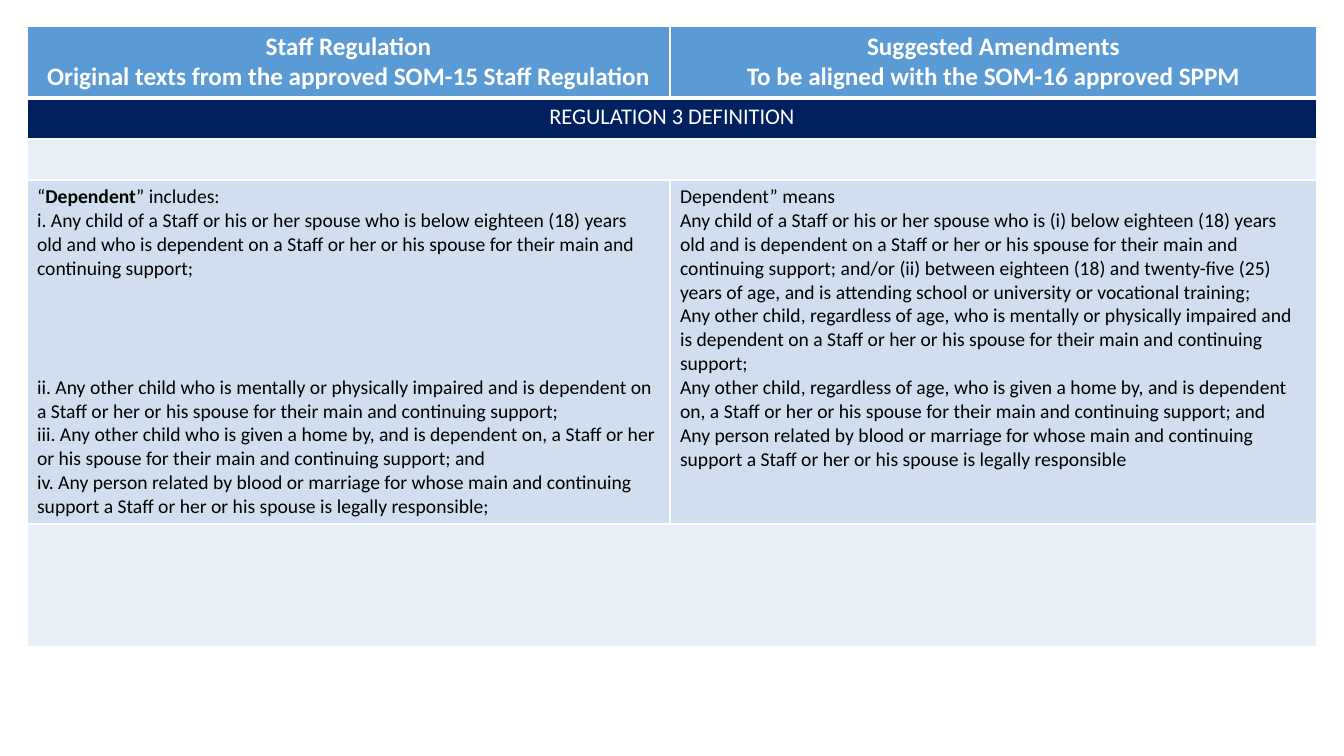
from lxml import etree
from pptx import Presentation
from pptx.dml.color import RGBColor
from pptx.enum.text import PP_ALIGN
from pptx.oxml.ns import qn
from pptx.util import Emu, Pt

CENTER, LEFT = PP_ALIGN.CENTER, PP_ALIGN.LEFT
WHITE = RGBColor(0xFF, 0xFF, 0xFF)
BLACK = RGBColor(0, 0, 0)
BLUE = RGBColor(0x5B, 0x9B, 0xD5)
NAVY = RGBColor(0, 0x20, 0x60)
PALE = RGBColor(0xE9, 0xEF, 0xF7)
SOFT = RGBColor(0xD0, 0xDE, 0xEF)
SCALE = 12192000 / 1344

HEAD = {"size": Pt(18), "bold": True, "color": WHITE, "align": CENTER}
BAND = {"size": Pt(16), "bold": False, "color": WHITE, "align": CENTER}
BODY = {"size": Pt(14), "bold": False, "color": BLACK, "align": LEFT}
GAP = Pt(68)

HEADS = [
    ["Staff Regulation", "Original texts from the approved SOM-15 Staff Regulation"],
    ["Suggested Amendments", "To be aligned with the SOM-16 approved SPPM"],
]
OLD = [
    ["“", "Dependent", "” includes:"],
    "i. Any child of a Staff or his or her spouse who is below eighteen (18) years",
    "old and who is dependent on a Staff or her or his spouse for their main and",
    "continuing support;",
    "ii. Any other child who is mentally or physically impaired and is dependent on a Staff or her or his spouse for their main and continuing support;",
    "iii. Any other child who is given a home by, and is dependent on, a Staff or her or his spouse for their main and continuing support; and",
    "iv. Any person related by blood or marriage for whose main and continuing",
    "support a Staff or her or his spouse is legally responsible;",
]
NEW = [
    "Dependent” means",
    "Any child of a Staff or his or her spouse who is (i) below eighteen (18) years old and is dependent on a Staff or her or his spouse for their main and continuing support; and/or (ii) between eighteen (18) and twenty-five (25) years of age, and is attending school or university or vocational training;",
    "Any other child, regardless of age, who is mentally or physically impaired and is dependent on a Staff or her or his spouse for their main and continuing support;",
    "Any other child, regardless of age, who is given a home by, and is dependent on, a Staff or her or his spouse for their main and continuing support; and",
    "Any person related by blood or marriage for whose main and continuing support a Staff or her or his spouse is legally responsible",
]


def px(count):
    """Turn whole pixels into EMU."""
    return Emu(round(count * SCALE))


class Sheet:
    """Holds the slide and its font, and draws table parts."""

    def __init__(self, slide, font):
        """Keep the slide and the font name."""
        self.slide, self.font = slide, font

    def table(self, left, top, cols, rows):
        """Add a plain table with the given column and row sizes."""
        frame = self.slide.shapes.add_table(
            len(rows), len(cols), px(left), px(top), px(sum(cols)), px(sum(rows)))
        grid = frame.table
        grid.first_row = grid.horz_banding = False
        for col, width in zip(grid.columns, cols):
            col.width = px(width)
        for row, height in zip(grid.rows, rows):
            row.height = px(height)
        return grid

    def paint(self, cell, color, base=1):
        """Give a cell white borders and a solid fill."""
        props = cell._tc.get_or_add_tcPr()
        for side, width in (("L", 1), ("R", 1), ("T", 1), ("B", base)):
            line = etree.SubElement(props, qn("a:ln" + side), w=str(Pt(width)))
            fill = etree.SubElement(line, qn("a:solidFill"))
            etree.SubElement(fill, qn("a:srgbClr"), val=str(WHITE))
        cell.fill.solid()
        cell.fill.fore_color.rgb = color

    def label(self, cell, lines, style):
        """Set paragraphs; in a list of runs every second one is bold."""
        frame = cell.text_frame
        for i, line in enumerate(lines):
            para = frame.add_paragraph() if i else frame.paragraphs[0]
            para.alignment = style["align"]
            for j, text in enumerate([line] if isinstance(line, str) else line):
                run = para.add_run()
                run.text = text
                look = {"name": self.font, "size": style["size"],
                        "bold": style["bold"] or j % 2 == 1}
                for key, value in look.items():
                    setattr(run.font, key, value)
                run.font.color.rgb = style["color"]


def main():
    """Build the slide and save it."""
    deck = Presentation()
    deck.slide_width, deck.slide_height = px(1344), px(756)
    sheet = Sheet(deck.slides.add_slide(deck.slide_layouts[6]), "Calibri")
    grid = sheet.table(27, 26, [643, 647], [72, 41, 41, 344, 123])

    for r, color in enumerate([BLUE, NAVY, PALE, SOFT, PALE]):
        for c in range(2):
            sheet.paint(grid.cell(r, c), color, 1 if r else 3)
    for r in (1, 2, 4):
        grid.cell(r, 0).merge(grid.cell(r, 1))

    for c, (head, body) in enumerate(zip(HEADS, [OLD, NEW])):
        sheet.label(grid.cell(0, c), head, HEAD)
        sheet.label(grid.cell(3, c), body, BODY)
    sheet.label(grid.cell(1, 0), ["REGULATION 3 DEFINITION"], BAND)
    grid.cell(3, 0).text_frame.paragraphs[4].space_before = GAP
    deck.save("out.pptx")


if __name__ == "__main__":
    main()
